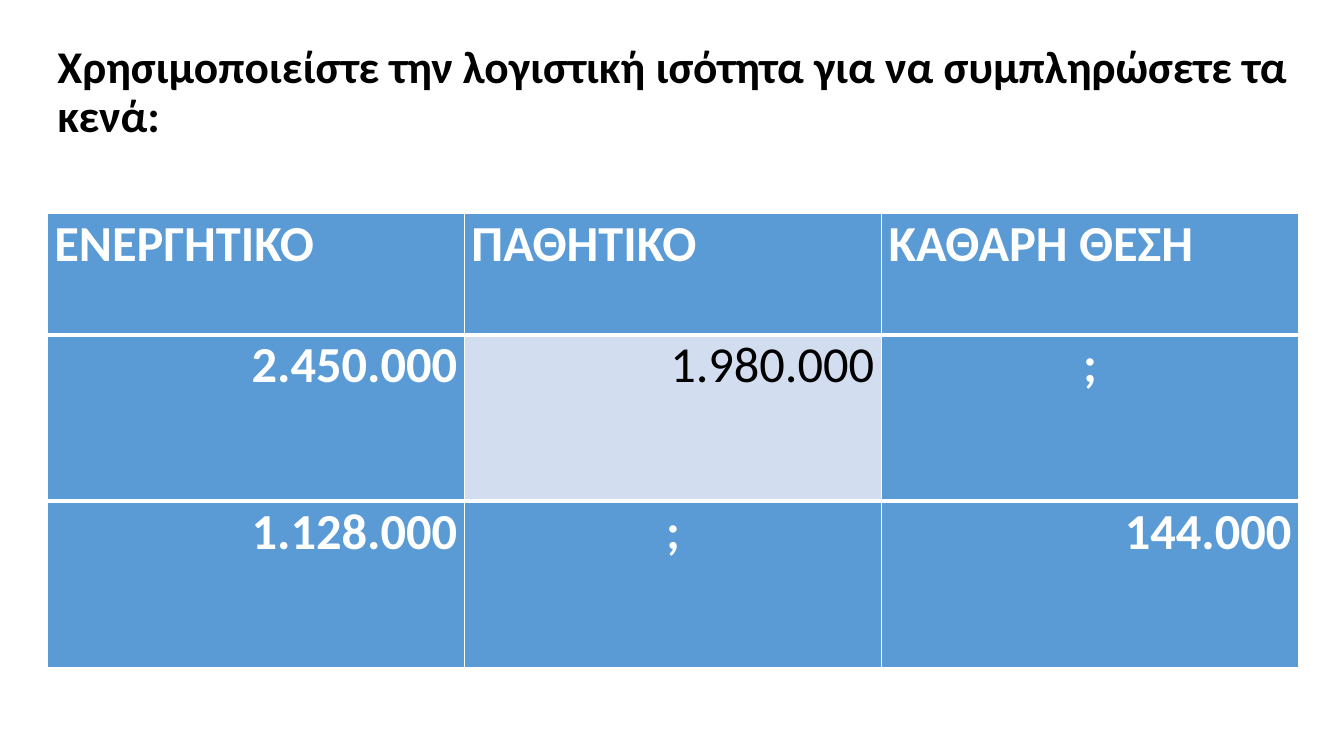
from lxml.etree import SubElement
from pptx import Presentation
from pptx.dml.color import RGBColor
from pptx.enum.text import MSO_ANCHOR as Anchor, PP_ALIGN as Align
from pptx.oxml.ns import qn
from pptx.util import Inches, Pt

TITLE = "Χρησιμοποιείστε την λογιστική ισότητα για να συμπληρώσετε τα κενά:"
ROWS = [
    ["ΕΝΕΡΓΗΤΙΚΟ", "ΠΑΘΗΤΙΚΟ", "ΚΑΘΑΡΗ ΘΕΣΗ"],
    ["2.450.000", "1.980.000", ";"],
    ["1.128.000", ";", "144.000"],
]
ROW_HEIGHTS = [1.2, 1.65, 1.65]
LEFT, WIDTH = 0.47, 12.41
PLAIN_CELL = (1, 1)
BLUE, PALE, WHITE, BLACK = "5B9BD5", "D2DEEF", "FFFFFF", "000000"


def color(value):
    return RGBColor.from_string(value)


def write(frame, text, size, ink, bold=True, align=Align.LEFT, spacing=1.0):
    para = frame.paragraphs[0]
    para.alignment = align
    para.line_spacing = spacing
    span = para.add_run()
    span.text = text
    span.font.name = "Calibri"
    span.font.size = Pt(size)
    span.font.bold = bold
    span.font.color.rgb = color(ink)


def add_borders(cell, widths):
    properties = cell._tc.get_or_add_tcPr()
    for side, points in widths.items():
        line = SubElement(properties, qn(f"a:ln{side}"), w=str(Pt(points)))
        fill = SubElement(line, qn("a:solidFill"))
        SubElement(fill, qn("a:srgbClr"), val=WHITE)


def cell_align(row, text):
    if row == 0:
        return Align.LEFT
    return Align.CENTER if text == ";" else Align.RIGHT


def add_title(page):
    box = page.shapes.add_textbox(Inches(LEFT), Inches(0.4), Inches(WIDTH), Inches(1.05))
    frame = box.text_frame
    frame.word_wrap = True
    frame.vertical_anchor = Anchor.MIDDLE
    write(frame, TITLE, 32.4, BLACK, spacing=0.9)


def add_balance_table(page):
    table = page.shapes.add_table(
        len(ROWS), len(ROWS[0]), Inches(LEFT), Inches(2.12),
        Inches(WIDTH), Inches(sum(ROW_HEIGHTS))).table
    last = len(ROWS) - 1
    for row, texts in enumerate(ROWS):
        table.rows[row].height = Inches(ROW_HEIGHTS[row])
        for column, text in enumerate(texts):
            cell = table.cell(row, column)
            plain = (row, column) == PLAIN_CELL
            add_borders(cell, {"L": 1, "R": 1, "T": 3 if row > 0 else 1,
                               "B": 3 if row < last else 1})
            cell.fill.solid()
            cell.fill.fore_color.rgb = color(PALE if plain else BLUE)
            cell.margin_left = cell.margin_right = Inches(0.07)
            cell.margin_top = cell.margin_bottom = 0
            write(cell.text_frame, text, 36, BLACK if plain else WHITE,
                  bold=not plain, align=cell_align(row, text))


def main():
    deck = Presentation()
    deck.slide_width, deck.slide_height = Inches(13.33), Inches(7.5)
    page = deck.slides.add_slide(deck.slide_layouts[6])
    add_title(page)
    add_balance_table(page)
    deck.save("out.pptx")


if __name__ == "__main__":
    main()
